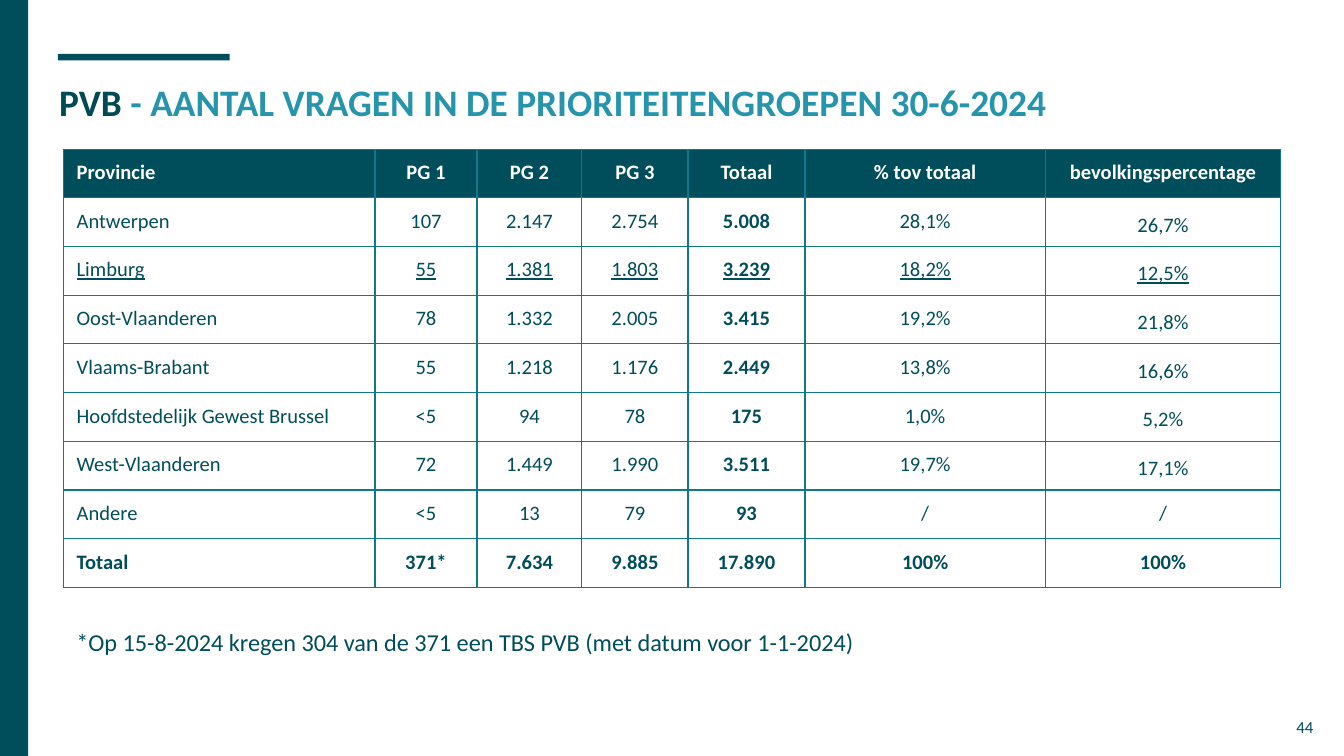
from lxml import etree
from pptx import Presentation
from pptx.dml.color import RGBColor
from pptx.enum.shapes import MSO_SHAPE
from pptx.enum.text import MSO_ANCHOR, PP_ALIGN
from pptx.oxml.ns import qn
from pptx.util import Inches, Pt

RECTANGLE = MSO_SHAPE.RECTANGLE
TOP, MIDDLE = MSO_ANCHOR.TOP, MSO_ANCHOR.MIDDLE
LEFT, CENTER, RIGHT = PP_ALIGN.LEFT, PP_ALIGN.CENTER, PP_ALIGN.RIGHT

SLIDE_WIDTH = 10
SLIDE_HEIGHT = SLIDE_WIDTH * 9 / 16

HEADER = ["Provincie", "PG 1", "PG 2", "PG 3", "Totaal", "% tov totaal", "bevolkingspercentage"]
PROVINCES = [
    ["Antwerpen", "107", "2.147", "2.754", "5.008", "28,1%", "26,7%"],
    ["Limburg", "55", "1.381", "1.803", "3.239", "18,2%", "12,5%"],
    ["Oost-Vlaanderen", "78", "1.332", "2.005", "3.415", "19,2%", "21,8%"],
    ["Vlaams-Brabant", "55", "1.218", "1.176", "2.449", "13,8%", "16,6%"],
    ["Hoofdstedelijk Gewest Brussel", "<5", "94", "78", "175", "1,0%", "5,2%"],
    ["West-Vlaanderen", "72", "1.449", "1.990", "3.511", "19,7%", "17,1%"],
]
OTHER = ["Andere", "<5", "13", "79", "93", "/", "/"]
TOTAL = ["Totaal", "371*", "7.634", "9.885", "17.890", "100%", "100%"]
COLUMN_WIDTHS = [2.32, 0.76, 0.78, 0.79, 0.87, 1.79, 1.75]
TABLE_HEIGHT = 3.26
SUM_COLUMN = HEADER.index("Totaal")
POPULATION_COLUMN = HEADER.index("bevolkingspercentage")


def color(value):
    return RGBColor.from_string(value)


class SlideBuilder:
    """Holds the house style and the slide being filled."""

    font = "Calibri"
    dark = "004D5C"
    title_dark = "004B53"
    accent = "2695AB"
    border = "11788C"
    white = "FFFFFF"

    def __init__(self, deck):
        self.slide = deck.slides.add_slide(deck.slide_layouts[5])

    def add_span(self, para, text, size, fill, bold=False, underline=False):
        span = para.add_run()
        span.text = text
        span.font.name = self.font
        span.font.size = Pt(size)
        span.font.bold = bold
        span.font.underline = underline
        span.font.color.rgb = color(fill)

    def format_frame(self, frame, anchor=TOP):
        frame.word_wrap = True
        frame.vertical_anchor = anchor
        frame.margin_left = frame.margin_right = Inches(0.1)
        frame.margin_top = frame.margin_bottom = Inches(0.1)

    def add_bar(self, left, top, width, height):
        bar = self.slide.shapes.add_shape(
            RECTANGLE, Inches(left), Inches(top), Inches(width), Inches(height))
        bar.shadow.inherit = False
        bar.fill.solid()
        bar.fill.fore_color.rgb = color(self.dark)
        bar.line.fill.background()

    def set_title(self, lead, rest):
        title = self.slide.shapes.title
        title.left, title.top = Inches(0.34), Inches(0.49)
        title.width, title.height = Inches(9.32), Inches(0.63)
        self.format_frame(title.text_frame)
        para = title.text_frame.paragraphs[0]
        para.alignment = LEFT
        self.add_span(para, lead, 20, self.title_dark, bold=True)
        self.add_span(para, rest, 20, self.accent, bold=True)

    def add_text(self, left, top, width, height, text, size, align=LEFT, anchor=TOP):
        box = self.slide.shapes.add_textbox(
            Inches(left), Inches(top), Inches(width), Inches(height))
        self.format_frame(box.text_frame, anchor)
        para = box.text_frame.paragraphs[0]
        para.alignment = align
        self.add_span(para, text, size, self.dark)

    def add_borders(self, cell):
        properties = cell._tc.get_or_add_tcPr()
        for side in ("lnL", "lnR", "lnT", "lnB"):
            line = etree.SubElement(properties, qn(f"a:{side}"), w=str(Pt(0.75)))
            fill = etree.SubElement(line, qn("a:solidFill"))
            etree.SubElement(fill, qn("a:srgbClr"), val=self.border)

    def fill_cell(self, cell, text, align, header, bold, underline, spacing):
        cell.margin_left = cell.margin_right = Inches(0.1)
        cell.margin_top, cell.margin_bottom = Inches(0.08), 0
        cell.vertical_anchor = TOP
        self.add_borders(cell)
        if header:
            cell.fill.solid()
            cell.fill.fore_color.rgb = color(self.dark)
        else:
            cell.fill.background()
        para = cell.text_frame.paragraphs[0]
        para.alignment = align
        if spacing:
            para.line_spacing = spacing
        self.add_span(para, text, 11, self.white if header else self.dark, bold, underline)

    def add_table(self, left, top, rows):
        frame = self.slide.shapes.add_table(
            len(rows), len(COLUMN_WIDTHS), Inches(left), Inches(top),
            Inches(sum(COLUMN_WIDTHS)), Inches(TABLE_HEIGHT))
        table = frame.table
        table.first_row = table.horz_banding = False
        for column, width in zip(table.columns, COLUMN_WIDTHS):
            column.width = Inches(width)
        for row_index, values in enumerate(rows):
            table.rows[row_index].height = Inches(TABLE_HEIGHT / len(rows))
            for column_index, text in enumerate(values):
                is_population = column_index == POPULATION_COLUMN and values in PROVINCES
                self.fill_cell(
                    table.cell(row_index, column_index), text,
                    align=CENTER if column_index else LEFT,
                    header=values is HEADER,
                    bold=values in (HEADER, TOTAL) or column_index == SUM_COLUMN,
                    underline=values[0] == "Limburg",
                    spacing=1.15 if is_population else None)


def main():
    deck = Presentation()
    deck.slide_width, deck.slide_height = Inches(SLIDE_WIDTH), Inches(SLIDE_HEIGHT)
    builder = SlideBuilder(deck)
    builder.add_bar(0.43, 0.4, 1.28, 0.05)
    builder.add_bar(0, 0, 0.21, SLIDE_HEIGHT)
    builder.set_title("PVB ", "- AANTAL VRAGEN IN DE PRIORITEITENGROEPEN 30-6-2024")
    builder.add_text(9.27, 5.19, 0.6, 0.43, "44", 9, RIGHT, MIDDLE)
    builder.add_table(0.47, 1.11, [HEADER, *PROVINCES, OTHER, TOTAL])
    builder.add_text(
        0.47, 4.57, 7.92, 0.42,
        "*Op 15-8-2024 kregen 304 van de 371 een TBS PVB (met datum voor 1-1-2024)", 13)
    deck.save("out.pptx")


if __name__ == "__main__":
    main()
